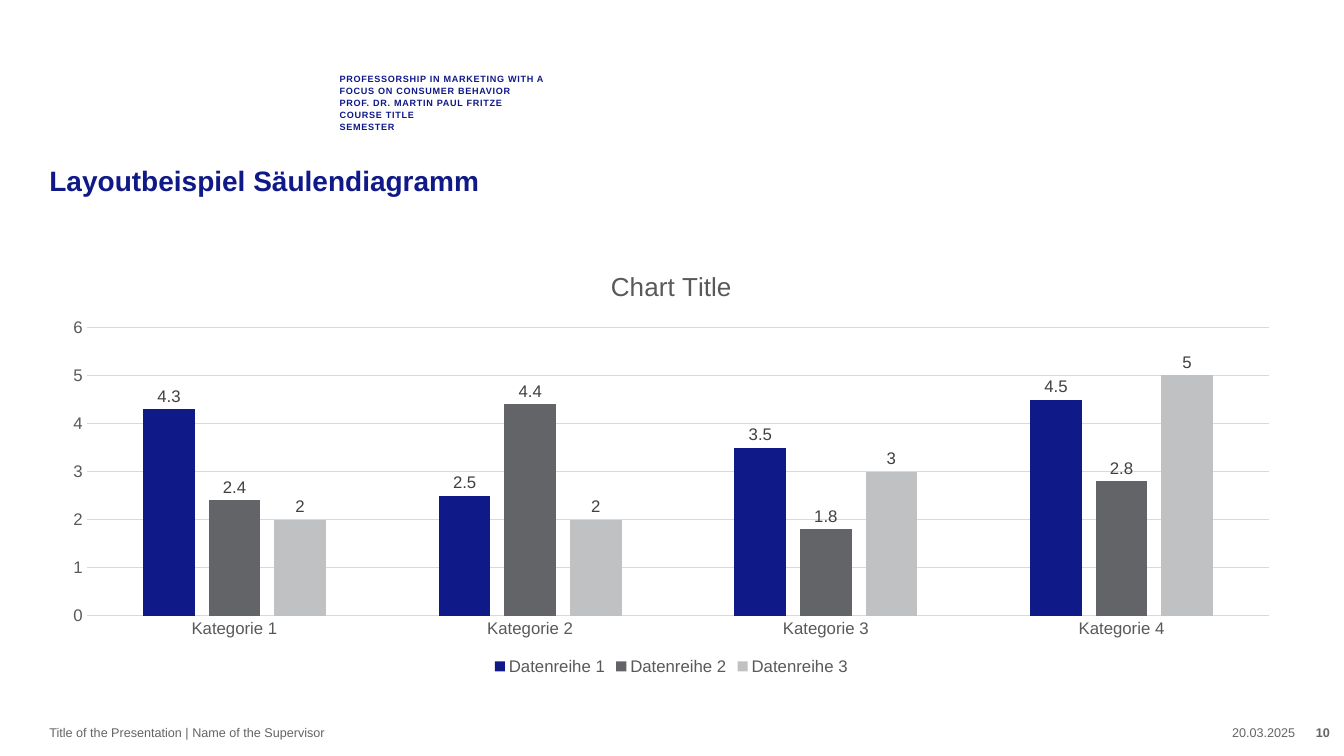
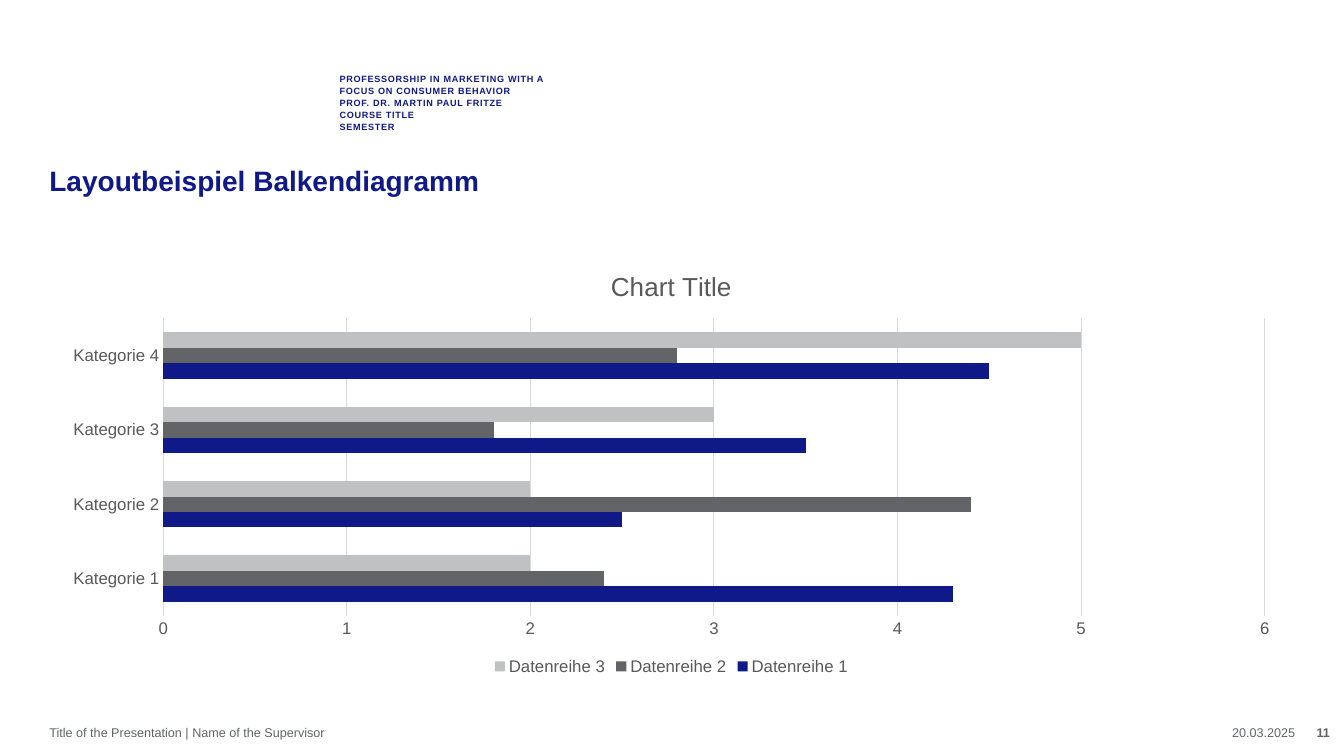
import pptx
import pptx.chart.data
import pptx.dml.color
import pptx.enum.chart
import pptx.enum.text
import pptx.util

Pt = pptx.util.Pt
ALIGN = pptx.enum.text.PP_ALIGN
ANCHOR = pptx.enum.text.MSO_ANCHOR
CHART_TYPE = pptx.enum.chart.XL_CHART_TYPE

FONT = "Arial"
BLUE, GREY, SILVER = "0F1987", "626468", "C0C1C3"
AXIS_TEXT, LABEL_TEXT, GRID = "595959", "404040", "D9D9D9"

LEFT, CONTENT_WIDTH = 35.3, 889.9
FOOTER_TOP, FOOTER_HEIGHT = 513.4, 20.2

HEADER_LINES = [
    "PROFESSORSHIP IN MARKETING WITH A FOCUS ON CONSUMER BEHAVIOR",
    "PROF. DR. MARTIN PAUL FRITZE",
    "COURSE TITLE",
    "SEMESTER",
]
CATEGORIES = ["Kategorie 1", "Kategorie 2", "Kategorie 3", "Kategorie 4"]
SERIES = [
    ("Datenreihe 1", [4.3, 2.5, 3.5, 4.5], BLUE),
    ("Datenreihe 2", [2.4, 4.4, 1.8, 2.8], GREY),
    ("Datenreihe 3", [2, 2, 3, 5], SILVER),
]


def color(value):
    return pptx.dml.color.RGBColor.from_string(value)


def format_font(font, size, value, bold=False):
    font.name = FONT
    font.size = Pt(size)
    font.bold = bold
    font.color.rgb = color(value)


def write_text(shape, lines, size=9, value=GREY, bold=False, align=ALIGN.LEFT,
               anchor=ANCHOR.MIDDLE, margins=(0, 0, 0, 0), line_spacing=None,
               letter_spacing=None):
    """Fill a shape with one paragraph per line; margins run left, top, right, bottom."""
    frame = shape.text_frame
    frame.word_wrap = True
    frame.auto_size = pptx.enum.text.MSO_AUTO_SIZE.NONE
    frame.vertical_anchor = anchor
    (frame.margin_left, frame.margin_top,
     frame.margin_right, frame.margin_bottom) = map(Pt, margins)
    for index, line in enumerate(lines):
        paragraph = frame.add_paragraph() if index else frame.paragraphs[0]
        paragraph.alignment = align
        paragraph.line_spacing = line_spacing
        run = paragraph.add_run()
        run.text = line
        format_font(run.font, size, value, bold)
        if letter_spacing:
            run._r.get_or_add_rPr().set("spc", str(round(letter_spacing * 100)))


def add_text(slide, left, top, width, height, lines, **text_format):
    box = slide.shapes.add_textbox(Pt(left), Pt(top), Pt(width), Pt(height))
    write_text(box, lines, **text_format)


def add_base_slide(presentation, title, number):
    """Add a slide with the shared title, header and footer."""
    slide = presentation.slides.add_slide(presentation.slide_layouts.get_by_name("Title Only"))
    heading = slide.shapes.title
    heading.left, heading.top = Pt(LEFT), Pt(116.6)
    heading.width, heading.height = Pt(CONTENT_WIDTH), Pt(51.1)
    write_text(heading, [title], size=20, value=BLUE, bold=True, anchor=ANCHOR.TOP)

    add_text(slide, 239.8, 34.6, 158.4, 62.6, HEADER_LINES, size=6.5, value=BLUE,
             bold=True, anchor=ANCHOR.BOTTOM, margins=(2.9, 0, 0, 2.9),
             line_spacing=1.1, letter_spacing=0.5)
    add_text(slide, LEFT, FOOTER_TOP, 798.5, FOOTER_HEIGHT,
             ["Title of the Presentation | Name of the Supervisor"])
    add_text(slide, 836.6, FOOTER_TOP, 88.6, FOOTER_HEIGHT, ["20.03.2025"],
             align=ALIGN.RIGHT)
    add_text(slide, 928, FOOTER_TOP, 32, FOOTER_HEIGHT, [str(number)], bold=True,
             align=ALIGN.RIGHT, margins=(0, 0, 10, 0))
    return slide


def format_axis(axis):
    axis.major_tick_mark = axis.minor_tick_mark = pptx.enum.chart.XL_TICK_MARK.NONE
    format_font(axis.tick_labels.font, 12, AXIS_TEXT)


def format_line(line):
    line.color.rgb = color(GRID)
    line.width = Pt(0.75)


def add_chart(slide, chart_type, gap, overlap=0, labels=False):
    data = pptx.chart.data.CategoryChartData()
    data.categories = CATEGORIES
    for name, values, _ in SERIES:
        data.add_series(name, values)
    chart = slide.shapes.add_chart(chart_type, Pt(34.6), Pt(179.3), Pt(CONTENT_WIDTH),
                                   Pt(306), data).chart
    format_font(chart.font, 10, "000000")

    chart.has_title = True
    title_run = chart.chart_title.text_frame.paragraphs[0].add_run()
    title_run.text = "Chart Title"
    format_font(title_run.font, 18.6, AXIS_TEXT)
    chart.chart_title.include_in_layout = False

    chart.has_legend = True
    chart.legend.position = pptx.enum.chart.XL_LEGEND_POSITION.BOTTOM
    chart.legend.include_in_layout = False
    format_font(chart.legend.font, 12, AXIS_TEXT)

    format_axis(chart.category_axis)
    format_line(chart.category_axis.format.line)
    format_axis(chart.value_axis)
    chart.value_axis.format.line.fill.background()
    chart.value_axis.has_major_gridlines = True
    format_line(chart.value_axis.major_gridlines.format.line)

    plot = chart.plots[0]
    plot.gap_width, plot.overlap = gap, overlap
    plot.vary_by_categories = False
    for series, (_, _, fill) in zip(plot.series, SERIES):
        series.invert_if_negative = False
        series.format.fill.solid()
        series.format.fill.fore_color.rgb = color(fill)
        if labels:
            series.data_labels.show_value = True
            series.data_labels.position = pptx.enum.chart.XL_LABEL_POSITION.OUTSIDE_END
            format_font(series.data_labels.font, 12, LABEL_TEXT)


def main():
    presentation = pptx.Presentation()
    presentation.slide_width, presentation.slide_height = Pt(960), Pt(540)

    slide = add_base_slide(presentation, "Layoutbeispiel Säulendiagramm", 10)
    add_chart(slide, CHART_TYPE.COLUMN_CLUSTERED, gap=219, overlap=-27, labels=True)

    slide = add_base_slide(presentation, "Layoutbeispiel Balkendiagramm", 11)
    add_chart(slide, CHART_TYPE.BAR_CLUSTERED, gap=182)

    presentation.save("out.pptx")


if __name__ == "__main__":
    main()
